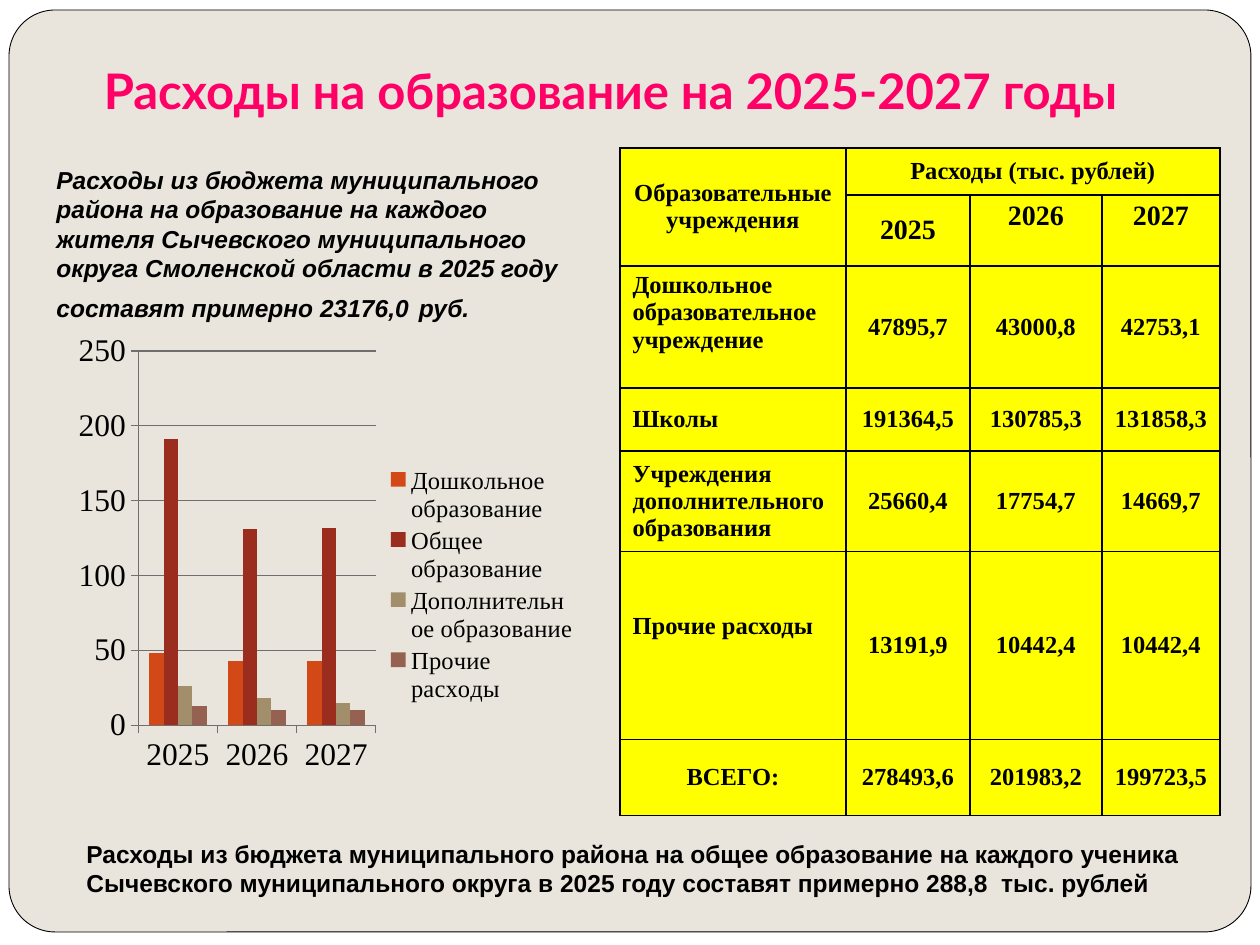
from lxml import etree
from pptx import Presentation
from pptx import util as u
from pptx.chart.data import CategoryChartData
from pptx.dml.color import RGBColor
from pptx.enum import chart as charts, shapes, text
from pptx.oxml import parse_xml
from pptx.oxml.ns import nsdecls, qn

SCALE = 914400 / 126
COLORS = {
    "panel": "E9E5DC", "title": "FF0066", "ink": "000000", "cell": "FFFF00", "grid": "6F6F6F",
    "preschool": "D34817", "general": "9B2D1F", "extra": "A28E6A", "other": "956251",
}
SERIF = "Times New Roman"
LEFT, CENTER, JUSTIFY = text.PP_ALIGN.LEFT, text.PP_ALIGN.CENTER, text.PP_ALIGN.JUSTIFY
TOP, MIDDLE, BOTTOM = text.MSO_ANCHOR.TOP, text.MSO_ANCHOR.MIDDLE, text.MSO_ANCHOR.BOTTOM

COLUMN_WIDTHS = [226, 124, 132, 118]
ROW_HEIGHTS = [47, 67, 122, 63, 94, 188, 76]
YEARS = ["2025", "2026", "2027"]
EXPENSES = [
    ("Дошкольное образовательное учреждение", "47895,7", "43000,8", "42753,1"),
    ("Школы", "191364,5", "130785,3", "131858,3"),
    ("Учреждения\nдополнительного\nобразования", "25660,4", "17754,7", "14669,7"),
    ("Прочие расходы", "13191,9", "10442,4", "10442,4"),
    ("ВСЕГО:", "278493,6", "201983,2", "199723,5"),
]
LABEL_FORMATS = [
    dict(align=JUSTIFY, anchor=TOP),
    dict(align=JUSTIFY),
    dict(align=JUSTIFY),
    dict(align=LEFT, anchor=TOP, top=61),
    dict(),
]
SERIES = [
    ("Дошкольное образование", (48, 43, 43), "preschool"),
    ("Общее образование", (191, 131, 132), "general"),
    ("Дополнительное образование", (26, 18, 15), "extra"),
    ("Прочие расходы", (13, 10, 10), "other"),
]


def px(length):
    return u.Emu(round(length * SCALE))


def rgb(name):
    return RGBColor.from_string(COLORS[name])


def style_font(font, size, name, color="ink", bold=False, italic=False):
    font.size, font.name = u.Pt(size), name
    font.bold, font.italic = bold, italic
    font.color.rgb = rgb(color)


def write(frame, content, size=14, font="Arial", color="ink", bold=True, italic=False,
          align=LEFT):
    """Fill a frame; content is a string or a list of (string, size) spans."""
    spans = [(content, size)] if isinstance(content, str) else content
    para = frame.paragraphs[0]
    para.alignment = align
    for words, span_size in spans:
        for number, line in enumerate(words.split("\n")):
            if number:
                para = frame.add_paragraph()
                para.alignment = align
            span = para.add_run()
            span.text = line
            style_font(span.font, span_size, font, color, bold, italic)


def add_text(page, bounds, content, anchor=MIDDLE, bottom=6, **style):
    frame = page.shapes.add_textbox(*map(px, bounds)).text_frame
    frame.word_wrap = True
    frame.vertical_anchor = anchor
    frame.margin_bottom = px(bottom)
    write(frame, content, **style)


def add_panel(page):
    panel = page.shapes.add_shape(shapes.MSO_SHAPE.ROUNDED_RECTANGLE,
                                  *map(px, (9, 10, 1242, 922)))
    panel.adjustments[0] = 0.05
    panel.shadow.inherit = False
    panel.fill.solid()
    panel.fill.fore_color.rgb = rgb("panel")
    panel.line.color.rgb = rgb("ink")
    panel.line.width = u.Pt(0.5)


def format_cell(cell):
    properties = cell._tc.get_or_add_tcPr()
    for side in ("lnL", "lnR", "lnT", "lnB"):
        properties.append(parse_xml(
            f'<a:{side} {nsdecls("a")} w="12700"><a:solidFill>'
            f'<a:srgbClr val="{COLORS["ink"]}"/></a:solidFill></a:{side}>'))
    cell.fill.solid()
    cell.fill.fore_color.rgb = rgb("cell")


def write_cell(cell, content, size=14, align=CENTER, anchor=MIDDLE, top=6):
    cell.vertical_anchor = anchor
    cell.margin_top = px(top)
    write(cell.text_frame, content, size=size, font=SERIF, align=align)


def add_expense_table(page):
    table = page.shapes.add_table(
        len(ROW_HEIGHTS), len(COLUMN_WIDTHS),
        *map(px, (620, 148, sum(COLUMN_WIDTHS), sum(ROW_HEIGHTS)))).table
    for column, width in zip(table.columns, COLUMN_WIDTHS):
        column.width = px(width)
    for row, height in zip(table.rows, ROW_HEIGHTS):
        row.height = px(height)
    for cell in table.iter_cells():
        format_cell(cell)

    # Two header rows
    table.cell(0, 0).merge(table.cell(1, 0))
    table.cell(0, 1).merge(table.cell(0, 3))
    write_cell(table.cell(0, 0), "Образовательные учреждения")
    write_cell(table.cell(0, 1), "Расходы (тыс. рублей)")
    for column, year in enumerate(YEARS, 1):
        write_cell(table.cell(1, column), year, size=16, anchor=MIDDLE if column == 1 else TOP)

    # Expense rows
    for row, ((label, *amounts), style) in enumerate(zip(EXPENSES, LABEL_FORMATS), 2):
        write_cell(table.cell(row, 0), label, **style)
        for column, amount in enumerate(amounts, 1):
            write_cell(table.cell(row, column), amount)


def place_plot(chart, x, y, w, h):
    area = chart._chartSpace.chart.plotArea
    for old in area.findall(qn("c:layout")):
        area.remove(old)
    layout = etree.Element(qn("c:layout"))
    manual = etree.SubElement(layout, qn("c:manualLayout"))
    for tag, value in (("layoutTarget", "inner"), ("xMode", "edge"), ("yMode", "edge"),
                       ("x", x), ("y", y), ("w", w), ("h", h)):
        etree.SubElement(manual, qn(f"c:{tag}")).set("val", str(value))
    area.insert(0, layout)


def add_expense_chart(page):
    data = CategoryChartData()
    data.categories = YEARS
    for name, values, _ in SERIES:
        data.add_series(name, values)
    chart = page.shapes.add_chart(charts.XL_CHART_TYPE.COLUMN_CLUSTERED,
                                  *map(px, (39, 325, 552, 520)), data).chart
    chart.has_title = False
    style_font(chart.font, 18, SERIF)
    place_plot(chart, 0.18, 0.05, 0.43, 0.72)

    # Columns
    plot = chart.plots[0]
    plot.gap_width, plot.overlap, plot.vary_by_categories = 150, 0, False
    for series, (_, _, color) in zip(plot.series, SERIES):
        series.format.fill.solid()
        series.format.fill.fore_color.rgb = rgb(color)

    # Axes
    value_axis = chart.value_axis
    value_axis.minimum_scale, value_axis.maximum_scale, value_axis.major_unit = 0, 250, 50
    value_axis.has_major_gridlines = True
    for line in (value_axis.major_gridlines.format.line, value_axis.format.line,
                 chart.category_axis.format.line):
        line.color.rgb = rgb("grid")
        line.width = u.Pt(0.75)

    # Legend
    chart.has_legend = True
    chart.legend.position = charts.XL_LEGEND_POSITION.RIGHT
    chart.legend.include_in_layout = False
    style_font(chart.legend.font, 14, SERIF)


def main():
    deck = Presentation()
    deck.slide_width, deck.slide_height = px(1260), px(945)
    page = deck.slides.add_slide(deck.slide_layouts[6])

    add_panel(page)
    add_text(page, (0, 35, 1221, 97), "Расходы на образование на 2025-2027 годы",
             anchor=BOTTOM, bottom=13, size=28, font="Lato", color="title", align=CENTER)
    add_expense_table(page)
    add_text(page, (44, 155, 536, 179), [
        ("Расходы из бюджета муниципального района на образование на каждого жителя "
         "Сычевского муниципального округа Смоленской области в 2025 году "
         "составят примерно 23176,0", 14), (" ", 20), ("руб.", 14)], italic=True)
    add_text(page, (74, 839, 1134, 58),
             "Расходы из бюджета муниципального района на общее образование на каждого ученика "
             "Сычевского муниципального округа в 2025 году составят примерно 288,8  тыс. рублей")
    add_expense_chart(page)

    deck.save("out.pptx")


if __name__ == "__main__":
    main()
